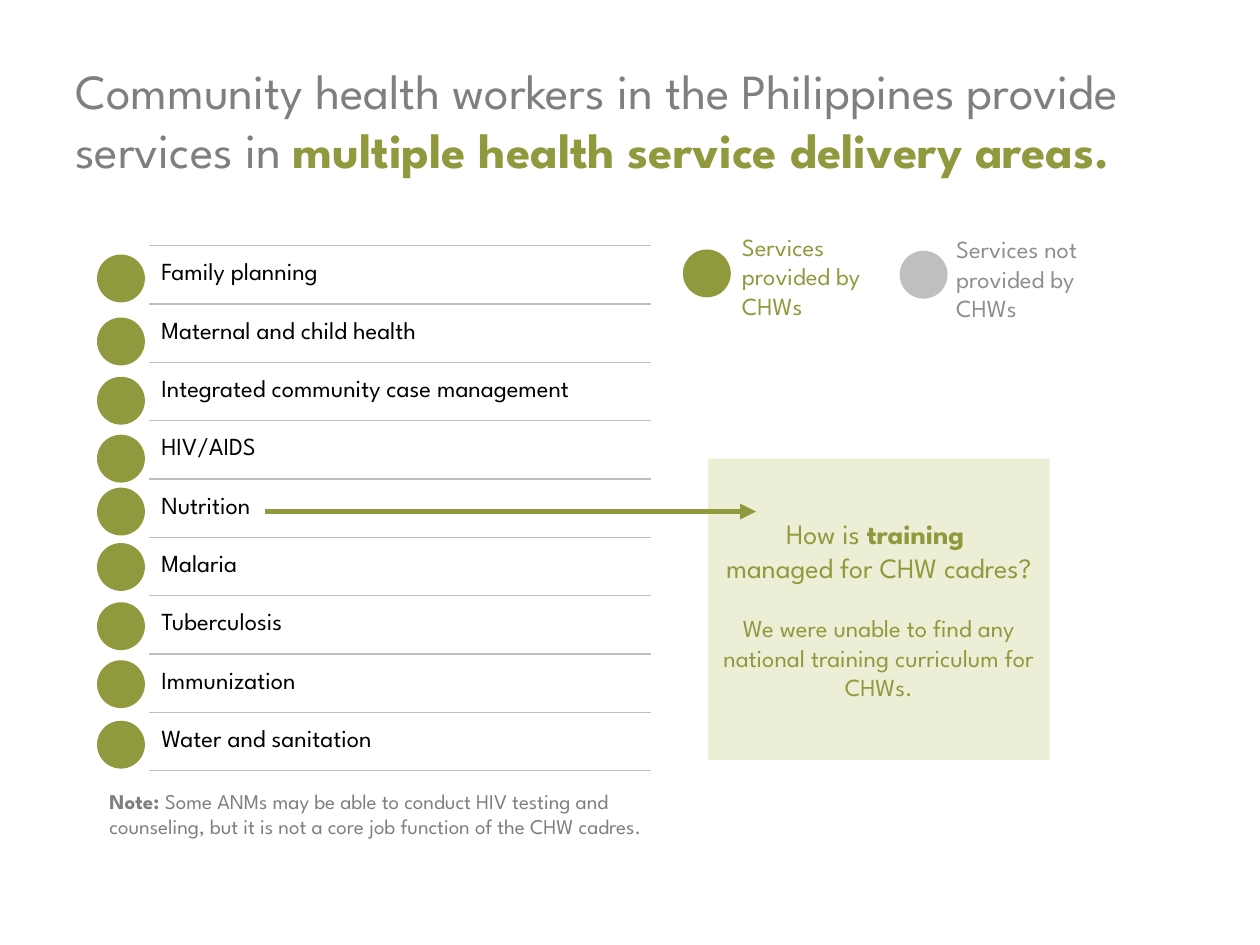
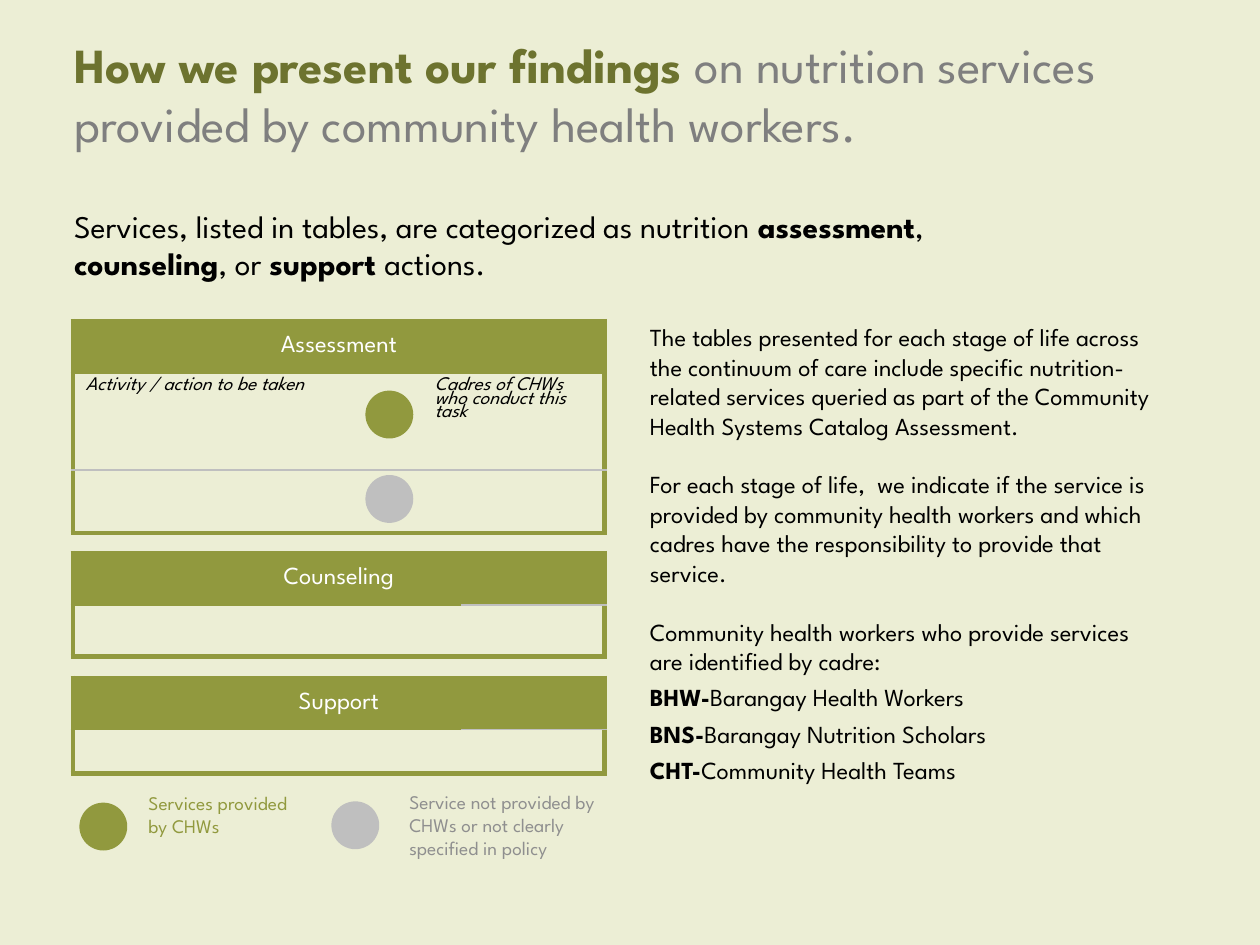
"""Build two slides on nutrition services provided by community health workers."""
import lxml.etree
import pptx
import pptx.dml.color
import pptx.enum.shapes
import pptx.enum.text
import pptx.oxml.ns
import pptx.util

Inches = pptx.util.Inches
Pt = pptx.util.Pt
RGBColor = pptx.dml.color.RGBColor
SHAPE = pptx.enum.shapes.MSO_SHAPE
ANCHOR = pptx.enum.text.MSO_ANCHOR
CENTER = pptx.enum.text.PP_ALIGN.CENTER
qn = pptx.oxml.ns.qn

GREEN = RGBColor(0x91, 0x99, 0x3E)
DARK_GREEN = RGBColor(0x6D, 0x73, 0x2F)
PALE_GREEN = RGBColor(0xEC, 0xEE, 0xD5)
SILVER = RGBColor(0xBF, 0xBF, 0xBF)
TITLE_GRAY = RGBColor(0x7F, 0x7F, 0x7F)
LEGEND_GRAY = RGBColor(0x8F, 0x8F, 0x8F)
BLACK = RGBColor(0, 0, 0)
WHITE = RGBColor(0xFF, 0xFF, 0xFF)
FONT = "League Spartan"
NO_GRID_STYLE = "{2D5ABB26-0587-4C30-8999-92F81FD0307C}"
DOT = 0.38
BLANK_LINE = 16.8


def add_run(paragraph, text, size, color, bold=False, italic=False):
    run = paragraph.add_run()
    run.text = text
    run.font.name = FONT
    run.font.size = Pt(size)
    run.font.color.rgb = color
    run.font.bold = bold
    run.font.italic = italic


def finish_cell(cell, borders, fill=None):
    properties = cell._tc.get_or_add_tcPr()
    for side in "LRTB":
        if side in borders:
            color, width = borders[side]
            edge = lxml.etree.SubElement(properties, qn("a:ln" + side), w=str(Pt(width)))
            solid = lxml.etree.SubElement(edge, qn("a:solidFill"))
            lxml.etree.SubElement(solid, qn("a:srgbClr"), val=str(color))
    if fill is None:
        cell.fill.background()
    else:
        cell.fill.solid()
        cell.fill.fore_color.rgb = fill
    if not cell.text:
        cell.margin_top = cell.margin_bottom = 0


deck = pptx.Presentation()
deck.slide_width = Inches(10)
deck.slide_height = Inches(7.5)
areas, guide = [deck.slides.add_slide(deck.slide_layouts[6]) for _ in range(2)]
for slide, backdrop in ((areas, WHITE), (guide, PALE_GREEN)):
    slide.background.fill.solid()
    slide.background.fill.fore_color.rgb = backdrop

services = ["Family planning", "Maternal and child health",
            "Integrated community case management", "HIV/AIDS", "Nutrition",
            "Malaria", "Tuberculosis", "Immunization", "Water and sanitation"]
service_list = areas.shapes.add_table(
    len(services), 2, Inches(0.67), Inches(1.95), Inches(4.5), Inches(4.17)).table
service_list.columns[0].width = Inches(0.51)
service_list.columns[1].width = Inches(3.99)
for row, service in enumerate(services):
    marker, label = service_list.cell(row, 0), service_list.cell(row, 1)
    label.vertical_anchor = ANCHOR.MIDDLE
    add_run(label.text_frame.paragraphs[0], service, 14, BLACK)
    finish_cell(marker, {})
    finish_cell(label, {"T": (SILVER, 1), "B": (SILVER, 1)})

categories = [
    ("Assessment", 2.55, [2.27, 0.5, 1.45], [0.41, 0.77, 0.5],
     {0: "Activity / action to be taken", 2: "Cadres of CHWs who conduct this task"}),
    ("Counseling", 4.39, [3.08, 1.14], [0.41, 0.41], {}),
    ("Support", 5.38, [3.08, 1.14], [0.41, 0.35], {}),
]
category_tables = []
for category, top, widths, heights, hints in categories:
    table = guide.shapes.add_table(
        len(heights), len(widths), Inches(0.58), Inches(top),
        Inches(sum(widths)), Inches(sum(heights))).table
    category_tables.append(table)
    for column, width in zip(table.columns, widths):
        column.width = Inches(width)
    for row, height in zip(table.rows, heights):
        row.height = Inches(height)
    last_row, last_col = len(heights) - 1, len(widths) - 1
    heading = table.cell(0, 0)
    heading.merge(table.cell(0, last_col))
    heading.vertical_anchor = ANCHOR.MIDDLE
    heading.text_frame.paragraphs[0].alignment = CENTER
    add_run(heading.text_frame.paragraphs[0], category, 14, WHITE)
    for col in range(last_col + 1):
        finish_cell(table.cell(0, col), {"L": (GREEN, 3), "R": (GREEN, 3),
                                         "T": (GREEN, 3), "B": (GREEN, 1)}, GREEN)
        for row in range(1, last_row + 1):
            cell = table.cell(row, col)
            under_heading = row == 1 and (col == 0 or last_row == 2)
            borders = {"T": (GREEN if under_heading else SILVER, 1),
                       "B": (GREEN, 3) if row == last_row else (SILVER, 1)}
            if col == 0:
                borders["L"] = (GREEN, 3)
            if col == last_col:
                borders["R"] = (GREEN, 3)
            if row == 1 and col in hints:
                hint = cell.text_frame.paragraphs[0]
                hint.line_spacing = 0.78
                add_run(hint, hints[col], 11, BLACK, italic=True)
            finish_cell(cell, borders)

for table in [service_list] + category_tables:
    table.first_row = table.horz_banding = False
    table._tbl.tblPr.find(qn("a:tableStyleId")).text = NO_GRID_STYLE

service_dot_tops = [2.02, 2.52, 2.99, 3.45, 3.87, 4.31, 4.78, 5.24, 5.72]
dots = [(areas, 0.77, top, GREEN) for top in service_dot_tops] + [
    (areas, 5.42, 1.98, GREEN), (areas, 7.14, 1.99, SILVER),
    (guide, 2.9, 3.1, GREEN), (guide, 2.9, 3.77, SILVER),
    (guide, 0.63, 6.37, GREEN), (guide, 2.63, 6.36, SILVER)]
for slide, left, top, color in dots:
    dot = slide.shapes.add_shape(
        SHAPE.OVAL, Inches(left), Inches(top), Inches(DOT), Inches(DOT))
    dot.shadow.inherit = False
    dot.fill.solid()
    dot.fill.fore_color.rgb = color
    dot.line.fill.background()

callout = areas.shapes.add_shape(
    SHAPE.RECTANGLE, Inches(5.62), Inches(3.64), Inches(2.71), Inches(2.39))
callout.shadow.inherit = False
callout.fill.solid()
callout.fill.fore_color.rgb = PALE_GREEN
callout.line.fill.background()

cadres = [("BHW-", "Barangay Health Workers"), ("BNS-", "Barangay Nutrition Scholars"),
          ("CHT-", "Community Health Teams")]
text_blocks = [
    (areas, (0.5, 0.33, 8.67, 1.24), ANCHOR.MIDDLE, [(0, 0, [
        ("Community health workers in the Philippines provide services in ", 28, TITLE_GRAY),
        ("multiple health service delivery areas.", 28, GREEN, True)])]),
    (areas, (5.79, 1.79, 1.35, 0.81), ANCHOR.TOP, [(0, 0, [
        ("Services provided by CHWs", 14, GREEN)])]),
    (areas, (7.49, 1.81, 1.35, 0.81), ANCHOR.TOP, [(0, 0, [
        ("Services not provided by CHWs", 14, LEGEND_GRAY)])]),
    (areas, (0.77, 6.21, 4.49, 0.71), ANCHOR.TOP, [(0, 0, [
        ("Note: ", 12, TITLE_GRAY, True),
        ("Some ANMs may be able to conduct HIV testing and counseling, but it is not "
         "a core job function of the CHW cadres.", 12, TITLE_GRAY)])]),
    (areas, callout, ANCHOR.MIDDLE, [
        (0, 0, [("How is ", 16, GREEN), ("training ", 16, GREEN, True)]),
        (0, 0, [("managed for CHW cadres?", 16, GREEN)]),
        (BLANK_LINE, 0, [("We were unable to find any national training curriculum "
                          "for CHWs.", 14, GREEN)])]),
    (guide, (0.49, 0.4, 8.76, 0.68), ANCHOR.MIDDLE, [(0, 0, [
        ("How we present our findings ", 28, DARK_GREEN, True),
        ("on nutrition services provided by community health workers.", 28, TITLE_GRAY)])]),
    (guide, (0.49, 1.59, 7.76, 0.71), ANCHOR.TOP, [(0, 0, [
        ("Services, listed in tables, are categorized as nutrition ", 18, BLACK),
        ("assessment", 18, BLACK, True), (", ", 18, BLACK),
        ("counseling", 18, BLACK, True), (", or ", 18, BLACK),
        ("support ", 18, BLACK, True), ("actions.", 18, BLACK)])]),
    (guide, (5.06, 2.51, 4.19, 4.04), ANCHOR.TOP, [
        (0, 0, [("The tables presented for each stage of life across the continuum of care "
                 "include specific nutrition-related services queried as part of the "
                 "Community Health Systems Catalog Assessment.", 14, BLACK)]),
        (BLANK_LINE, 0, [("For each stage of life,  we indicate if the service is provided by "
                          "community health workers and which cadres have the responsibility "
                          "to provide that service.", 14, BLACK)]),
        (BLANK_LINE, 4, [("Community health workers who provide services are identified "
                          "by cadre:", 14, BLACK)]),
    ] + [(0, 4, [(code, 14, BLACK, True), (cadre, 14, BLACK)]) for code, cadre in cadres]),
    (guide, (1.08, 6.23, 1.35, 0.66), ANCHOR.TOP, [(0, 0, [
        ("Services provided by CHWs", 11, GREEN)])]),
    (guide, (3.15, 6.22, 1.75, 0.66), ANCHOR.TOP, [(0, 0, [
        ("Service not provided by CHWs or not clearly specified in policy",
         11, LEGEND_GRAY)])]),
]
for slide, place, anchor, paragraphs in text_blocks:
    holder = place if place is callout else slide.shapes.add_textbox(*map(Inches, place))
    frame = holder.text_frame
    frame.word_wrap = True
    frame.vertical_anchor = anchor
    for index, (before, after, runs) in enumerate(paragraphs):
        paragraph = frame.add_paragraph() if index else frame.paragraphs[0]
        paragraph.space_before = Pt(before)
        paragraph.space_after = Pt(after)
        if place is callout:
            paragraph.alignment = CENTER
        for run in runs:
            add_run(paragraph, *run)

nutrition_arrow = areas.shapes.add_connector(
    pptx.enum.shapes.MSO_CONNECTOR.STRAIGHT, Inches(2.1), Inches(4.06), Inches(6), Inches(4.06))
nutrition_arrow.line.color.rgb = GREEN
nutrition_arrow.line.width = Pt(3)
lxml.etree.SubElement(nutrition_arrow.line._get_or_add_ln(), qn("a:tailEnd"), type="triangle")
lxml.etree.SubElement(nutrition_arrow._element.spPr, qn("a:effectLst"))

deck.save("out.pptx")
